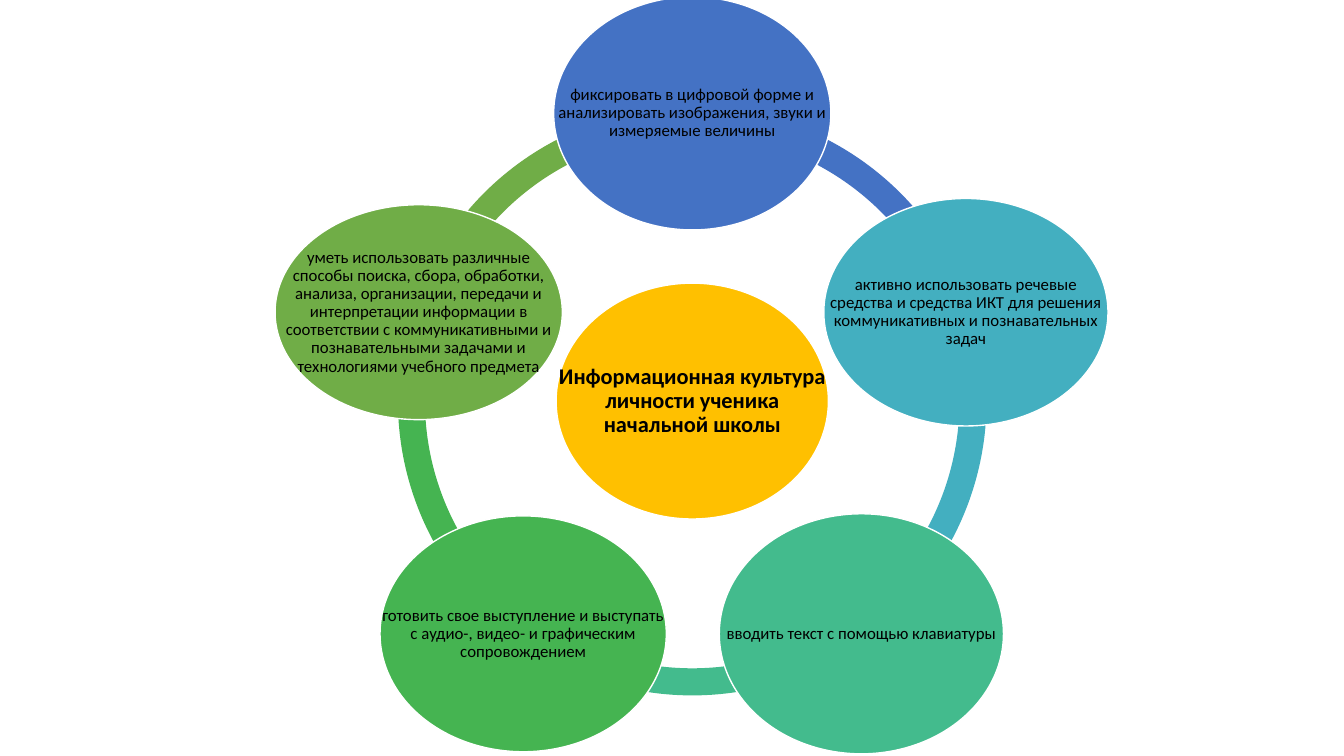
from math import cos, radians, sin

from pptx import Presentation
from pptx.dml.color import RGBColor
from pptx.enum import shapes, text
from pptx.util import Pt

SLIDE = (960, 540)
CENTER = (494.5, 286.5)
RING_SIZE = 420.5
RING_THICKNESS = 0.046
ORBIT = 205.5
ARC_UNIT = 0.6

CORE = ("Информационная культура личности ученика начальной школы", "FFC000", 194.5, 168.5)
SKILLS = [
    ("фиксировать в цифровой форме и анализировать изображения, звуки и измеряемые величины",
     "4472C4", 198, 166.5),
    ("активно использовать речевые средства и средства ИКТ для решения коммуникативных "
     "и познавательных задач",
     "43AFC0", 203, 162.5),
    ("вводить текст с помощью клавиатуры", "43BB8D", 203, 171.5),
    ("готовить свое выступление и выступать с аудио-, видео- и графическим сопровождением",
     "45B451", 204.5, 168.5),
    ("уметь использовать различные способы поиска, сбора, обработки, анализа, организации, "
     "передачи и интерпретации информации в соответствии с коммуникативными и познавательными "
     "задачами и технологиями учебного предмета",
     "70AD47", 205.2, 153.5),
]


def color(value):
    return RGBColor.from_string(value)


def frame(x, y, width, height):
    return [Pt(v) for v in (x - width / 2, y - height / 2, width, height)]


def add_figure(page, kind, place, fill, outline=None):
    figure = page.shapes.add_shape(kind, *place)
    figure.shadow.inherit = False
    figure.fill.solid()
    figure.fill.fore_color.rgb = color(fill)
    if outline:
        figure.line.color.rgb = color(outline)
        figure.line.width = Pt(1)
    else:
        figure.line.fill.background()
    return figure


def add_text(page, words, place, size=12, bold=False):
    box = page.shapes.add_textbox(*place)
    body = box.text_frame
    body.word_wrap = True
    body.vertical_anchor = text.MSO_ANCHOR.MIDDLE
    body.margin_left = body.margin_right = body.margin_top = body.margin_bottom = Pt(1.2)
    para = body.paragraphs[0]
    para.alignment = text.PP_ALIGN.CENTER
    para.line_spacing = 0.9
    span = para.add_run()
    span.text = words
    span.font.name = "Calibri"
    span.font.size = Pt(size)
    span.font.bold = bold
    span.font.color.rgb = color("000000")


def add_bubble(page, content, x, y, **style):
    words, fill, width, height = content
    place = frame(x, y, width, height)
    add_figure(page, shapes.MSO_SHAPE.OVAL, place, fill, outline="FFFFFF")
    add_text(page, words, place, **style)


def main():
    deck = Presentation()
    deck.slide_width, deck.slide_height = map(Pt, SLIDE)
    page = deck.slides.add_slide(deck.slide_layouts[6])

    step = 360 / len(SKILLS)
    angles = [270 + step * i for i in range(len(SKILLS))]

    for skill, angle in reversed(list(zip(SKILLS, angles))):
        arc = add_figure(page, shapes.MSO_SHAPE.BLOCK_ARC,
                         frame(*CENTER, RING_SIZE, RING_SIZE), skill[1])
        arc.adjustments[0] = angle % 360 * ARC_UNIT
        arc.adjustments[1] = (angle + step) % 360 * ARC_UNIT
        arc.adjustments[2] = RING_THICKNESS

    add_bubble(page, CORE, *CENTER, size=16, bold=True)
    for skill, angle in zip(SKILLS, angles):
        x = CENTER[0] + ORBIT * cos(radians(angle))
        y = CENTER[1] + ORBIT * sin(radians(angle))
        add_bubble(page, skill, x, y)

    deck.save("out.pptx")


if __name__ == "__main__":
    main()
